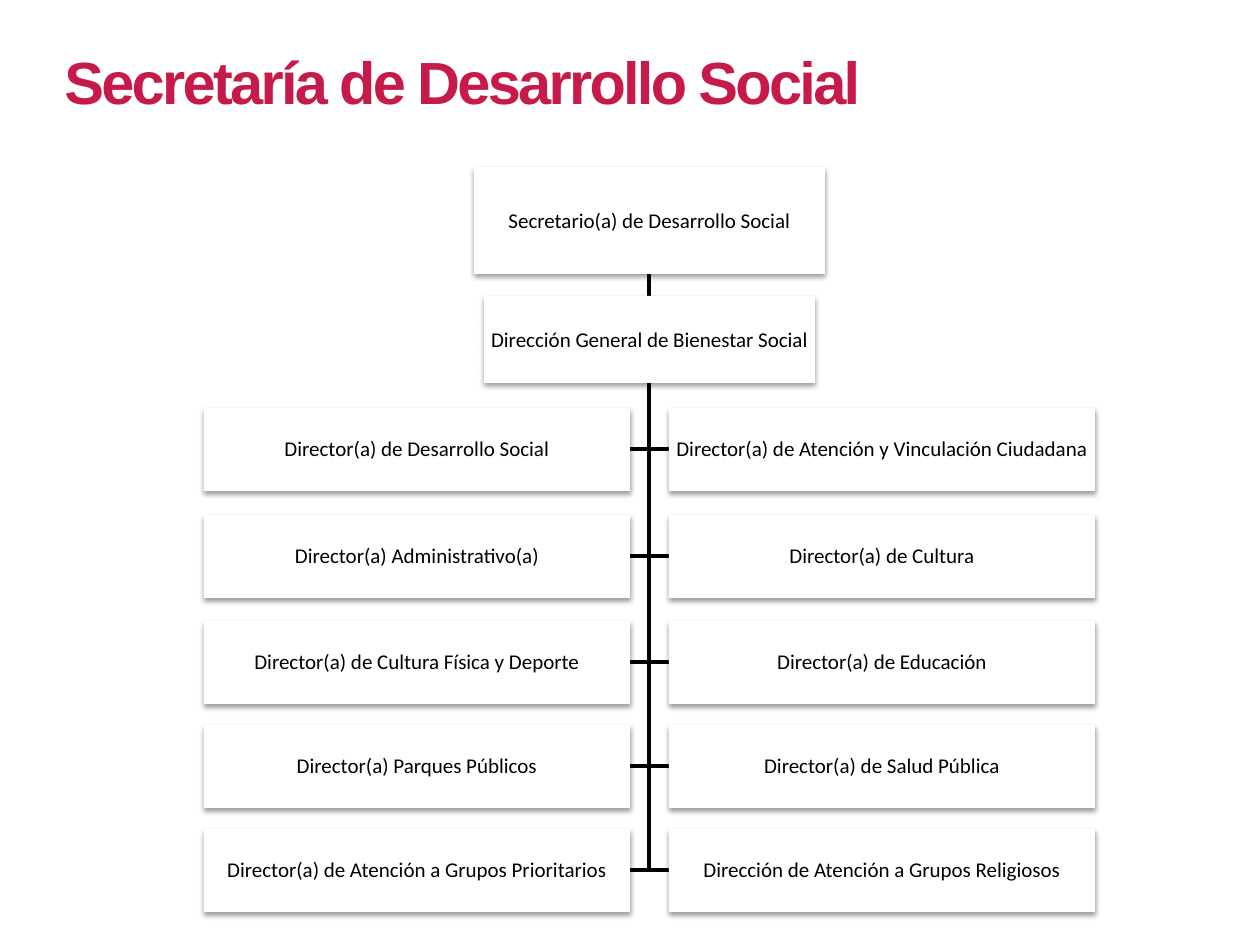
from lxml.etree import SubElement
from pptx import Presentation
from pptx.dml.color import RGBColor
from pptx.enum.shapes import MSO_CONNECTOR, MSO_SHAPE
from pptx.enum.text import MSO_ANCHOR, PP_ALIGN
from pptx.oxml.ns import qn
from pptx.util import Emu, Pt

SCALE = 914400 / 126
COLORS = {"title": "C51A4A", "line": "000000", "box": "FFFFFF", "text": "000000"}

TRUNK = 649
BOX_WIDTH, BOX_HEIGHT = 426, 83
LEFT_COLUMN, RIGHT_COLUMN = 204, 669
SECRETARY = (474, 167, 351, 107)
GENERAL = (484, 296, 331, 87)
DIRECTORS = [
    (408, "Director(a) de Desarrollo Social", "Director(a) de Atención y Vinculación Ciudadana"),
    (515, "Director(a) Administrativo(a)", "Director(a) de Cultura"),
    (621, "Director(a) de Cultura Física y Deporte", "Director(a) de Educación"),
    (725, "Director(a) Parques Públicos", "Director(a) de Salud Pública"),
    (829, "Director(a) de Atención a Grupos Prioritarios", "Dirección de Atención a Grupos Religiosos"),
]


def px(length):
    return Emu(round(length * SCALE))


def color(name):
    return RGBColor.from_string(COLORS[name])


def write(frame, text, *, font="Calibri", size=12, fill="text", bold=False,
          align=PP_ALIGN.CENTER, line_spacing=None, tracking=None, inset=None):
    frame.word_wrap = True
    frame.vertical_anchor = MSO_ANCHOR.MIDDLE
    if inset is not None:
        frame.margin_left = frame.margin_right = px(inset)
        frame.margin_top = frame.margin_bottom = px(inset)
    para = frame.paragraphs[0]
    para.alignment = align
    if line_spacing:
        para.line_spacing = line_spacing
    span = para.add_run()
    span.text = text
    span.font.name = font
    span.font.size = Pt(size)
    span.font.bold = bold
    span.font.color.rgb = color(fill)
    if tracking:
        span.font._element.set("spc", str(round(tracking * 100)))


class Chart:
    """Draws an organisation chart on the current page."""

    def __init__(self, page):
        self.page = page

    def title(self, text, left, top, width, height):
        box = self.page.shapes.add_textbox(px(left), px(top), px(width), px(height))
        write(box.text_frame, text, font="Arial", size=34, fill="title", bold=True,
              align=PP_ALIGN.LEFT, tracking=-1.5)

    def box(self, text, left, top, width, height, line_spacing=None):
        box = self.page.shapes.add_shape(
            MSO_SHAPE.RECTANGLE, px(left), px(top), px(width), px(height))
        box.fill.solid()
        box.fill.fore_color.rgb = color("box")
        box.line.fill.background()
        self.shadow(box)
        write(box.text_frame, text, line_spacing=line_spacing, inset=1)

    def shadow(self, box):
        box.shadow.inherit = False
        effects = box._element.spPr.find(qn("a:effectLst"))
        outer = SubElement(effects, qn("a:outerShdw"), blurRad="40000", dist="20000",
                           dir="5400000", rotWithShape="0")
        tint = SubElement(outer, qn("a:srgbClr"), val=COLORS["line"])
        SubElement(tint, qn("a:alpha"), val="38000")

    def stroke(self, line):
        line.color.rgb = color("line")
        line.width = Pt(2)

    def elbow(self, x, top, end_x, end_y):
        builder = self.page.shapes.build_freeform(x, top, scale=SCALE)
        builder.add_line_segments([(x, end_y), (end_x, end_y)], close=False)
        branch = builder.convert_to_shape()
        branch.fill.background()
        branch.shadow.inherit = False
        self.stroke(branch.line)

    def link(self, x, top, bottom):
        link = self.page.shapes.add_connector(
            MSO_CONNECTOR.STRAIGHT, px(x), px(top), px(x), px(bottom))
        SubElement(link._element.spPr, qn("a:effectLst"))
        self.stroke(link.line)


def main():
    deck = Presentation()
    deck.slide_width, deck.slide_height = px(1260), px(945)
    chart = Chart(deck.slides.add_slide(deck.slide_layouts[6]))

    chart.title("Secretaría de Desarrollo Social", 52, 23, 1134, 116)
    trunk_top = GENERAL[1] + GENERAL[3]
    for top, *_ in reversed(DIRECTORS):
        for side in (RIGHT_COLUMN, LEFT_COLUMN + BOX_WIDTH):
            chart.elbow(TRUNK, trunk_top, side, top + BOX_HEIGHT // 2)
    chart.link(TRUNK, SECRETARY[1] + SECRETARY[3], GENERAL[1])

    chart.box("Secretario(a) de Desarrollo Social", *SECRETARY)
    chart.box("Dirección General de Bienestar Social", *GENERAL)
    for top, *names in DIRECTORS:
        for left, name in zip((LEFT_COLUMN, RIGHT_COLUMN), names):
            chart.box(name, left, top, BOX_WIDTH, BOX_HEIGHT, line_spacing=0.9)

    deck.save("out.pptx")


if __name__ == "__main__":
    main()
